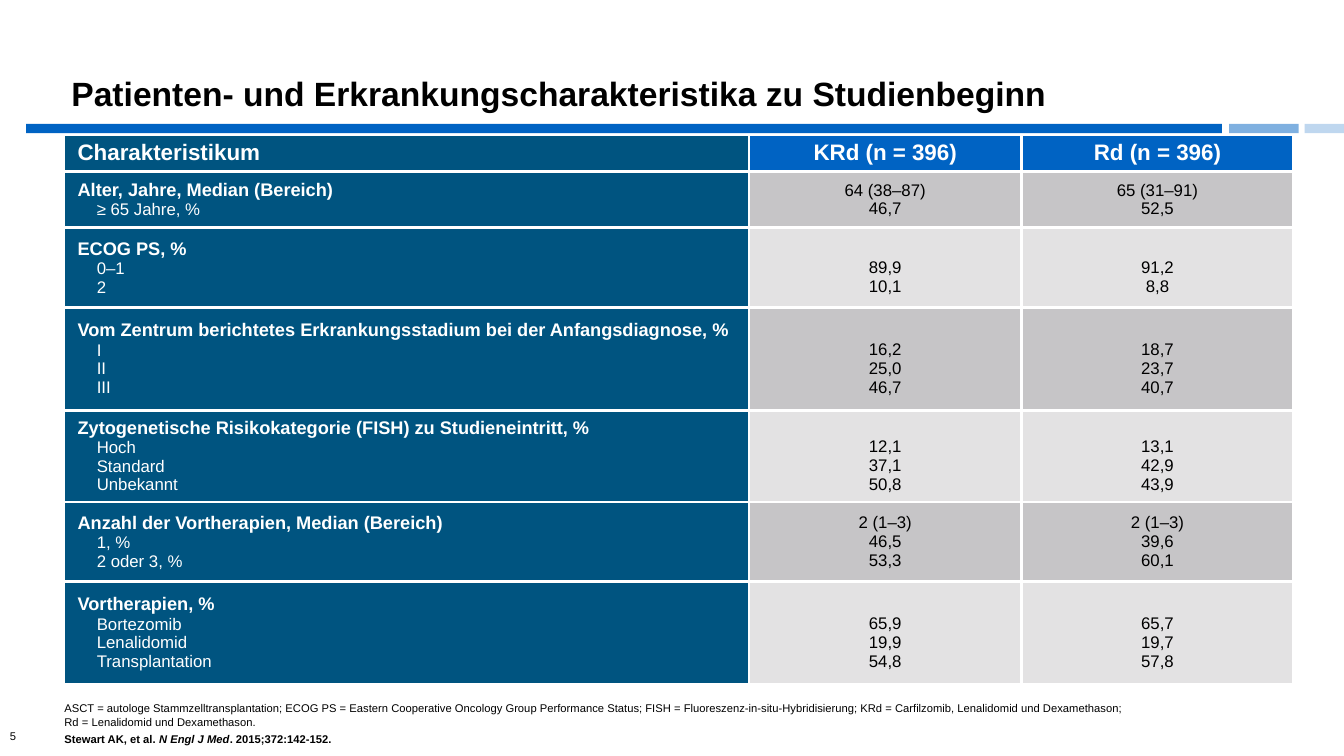
"""Build the slide with baseline patient and disease characteristics."""
from lxml import etree
from pptx import Presentation
from pptx.dml.color import RGBColor
from pptx.enum.shapes import MSO_SHAPE
from pptx.enum.text import MSO_ANCHOR, PP_ALIGN
from pptx.oxml import parse_xml
from pptx.oxml.ns import nsdecls, qn
from pptx.util import Inches, Pt

RECTANGLE = MSO_SHAPE.RECTANGLE
MIDDLE, BOTTOM = MSO_ANCHOR.MIDDLE, MSO_ANCHOR.BOTTOM
LEFT, CENTER = PP_ALIGN.LEFT, PP_ALIGN.CENTER
BLUE, NAVY, WHITE, BLACK = "0063C3", "005480", "FFFFFF", "000000"
BANDS = ["C6C5C7", "E3E2E3"]
LINE_HEIGHT = 0.19


def color(value):
    """Turn a hex string into a colour."""
    return RGBColor.from_string(value)


def style(span, size, value, bold=False):
    """Set the font of one run."""
    span.font.name = "Arial"
    span.font.size = Pt(size)
    span.font.bold = bold
    span.font.color.rgb = color(value)


deck = Presentation()
deck.slide_width, deck.slide_height = Inches(13.33), Inches(7.5)
page = deck.slides.add_slide(deck.slide_layouts[6])

for left, width, opacity in [(0.26, 11.86, 100), (12.19, 0.69, 50), (12.94, 0.39, 25)]:
    strip = page.shapes.add_shape(RECTANGLE, Inches(left), Inches(1.23), Inches(width), Inches(0.09))
    strip.shadow.inherit = False
    strip.line.fill.background()
    strip.fill.solid()
    strip.fill.fore_color.rgb = color(BLUE)
    if opacity < 100:
        tint = strip.element.spPr.find(".//" + qn("a:srgbClr"))
        etree.SubElement(tint, qn("a:alpha")).set("val", str(opacity * 1000))

header = ["Charakteristikum", "KRd (n = 396)", "Rd (n = 396)"]
groups = [
    (0.56, ["Alter, Jahre, Median (Bereich)", "≥ 65 Jahre, %"],
     ["64 (38–87)", "46,7"], ["65 (31–91)", "52,5"]),
    (0.79, ["ECOG PS, %", "0–1", "2"],
     ["89,9", "10,1"], ["91,2", "8,8"]),
    (1.02, ["Vom Zentrum berichtetes Erkrankungsstadium bei der Anfangsdiagnose, %", "I", "II", "III"],
     ["16,2", "25,0", "46,7"], ["18,7", "23,7", "40,7"]),
    (0.91, ["Zytogenetische Risikokategorie (FISH) zu Studieneintritt, %", "Hoch", "Standard", "Unbekannt"],
     ["12,1", "37,1", "50,8"], ["13,1", "42,9", "43,9"]),
    (0.79, ["Anzahl der Vortherapien, Median (Bereich)", "1, %", "2 oder 3, %"],
     ["2 (1–3)", "46,5", "53,3"], ["2 (1–3)", "39,6", "60,1"]),
    (1.02, ["Vortherapien, %", "Bortezomib", "Lenalidomid", "Transplantation"],
     ["65,9", "19,9", "54,8"], ["65,7", "19,7", "57,8"]),
]
rows = [(0.36, *[[label] for label in header])] + groups

frame = page.shapes.add_table(len(rows), 3, Inches(0.63), Inches(1.34), Inches(12.2), Inches(5.45))
table = frame.table
for column, width in zip(table.columns, [6.8, 2.7, 2.7]):
    column.width = Inches(width)

for row_index, (height, *cells) in enumerate(rows):
    table.rows[row_index].height = Inches(height)
    for column_index, lines in enumerate(cells):
        cell = table.cell(row_index, column_index)
        cell.vertical_anchor = MIDDLE
        cell.margin_left = cell.margin_right = Inches(0.14)
        missing_lines = len(cells[0]) - len(lines)
        cell.margin_top = Inches(0.05 + LINE_HEIGHT * missing_lines)
        cell.margin_bottom = Inches(0.05)
        properties = cell._tc.get_or_add_tcPr()
        for side in ["lnL", "lnR", "lnT", "lnB"]:
            properties.append(parse_xml(
                f'<a:{side} {nsdecls("a")} w="28575"><a:solidFill>'
                f'<a:srgbClr val="{WHITE}"/></a:solidFill></a:{side}>'))
        is_header, is_label = row_index == 0, column_index == 0
        cell.fill.solid()
        cell.fill.fore_color.rgb = color(
            NAVY if is_label else BLUE if is_header else BANDS[(row_index - 1) % 2])
        cell.text_frame.text = "\n".join(lines)
        for line_index, para in enumerate(cell.text_frame.paragraphs):
            para.alignment = LEFT if is_label else CENTER
            is_heading = is_label and line_index == 0
            size = 16 if is_header else 13 if is_heading else 12
            style(para.runs[0], size, WHITE if is_header or is_label else BLACK, is_header or is_heading)
            if is_label and line_index > 0:
                indent = para._p.get_or_add_pPr()
                indent.set("marL", str(Inches(0.19)))
                indent.set("indent", "0")

footnote = ("ASCT = autologe Stammzelltransplantation; ECOG PS = Eastern Cooperative Oncology Group "
            "Performance Status; FISH = Fluoreszenz-in-situ-Hybridisierung; KRd = Carfilzomib, "
            "Lenalidomid und Dexamethason;\vRd = Lenalidomid und Dexamethason.")
texts = [
    ("Patienten- und Erkrankungscharakteristika zu Studienbeginn", 0.61, -0.03, 12.25, 1.21, 24, True),
    ("5", 0, 7.18, 0.67, 0.24, 8, False),
    (footnote, 0.54, 6.9, 11.09, 0.55, 8, False),
]
for text, left, top, width, height, size, bold in texts:
    box = page.shapes.add_textbox(Inches(left), Inches(top), Inches(width), Inches(height))
    box.text_frame.word_wrap = True
    box.text_frame.vertical_anchor = BOTTOM
    para = box.text_frame.paragraphs[0]
    para.text = text
    if bold:
        para.line_spacing = 0.9
    for span in para.runs:
        style(span, size, BLACK, bold)

para.space_after = Pt(3)
citation = box.text_frame.add_paragraph()
for text, italic in [("Stewart AK, et al. ", False), ("N Engl J Med", True), (". 2015;372:142-152.", False)]:
    span = citation.add_run()
    span.text = text
    style(span, 8, BLACK, True)
    span.font.italic = italic

deck.save("out.pptx")
